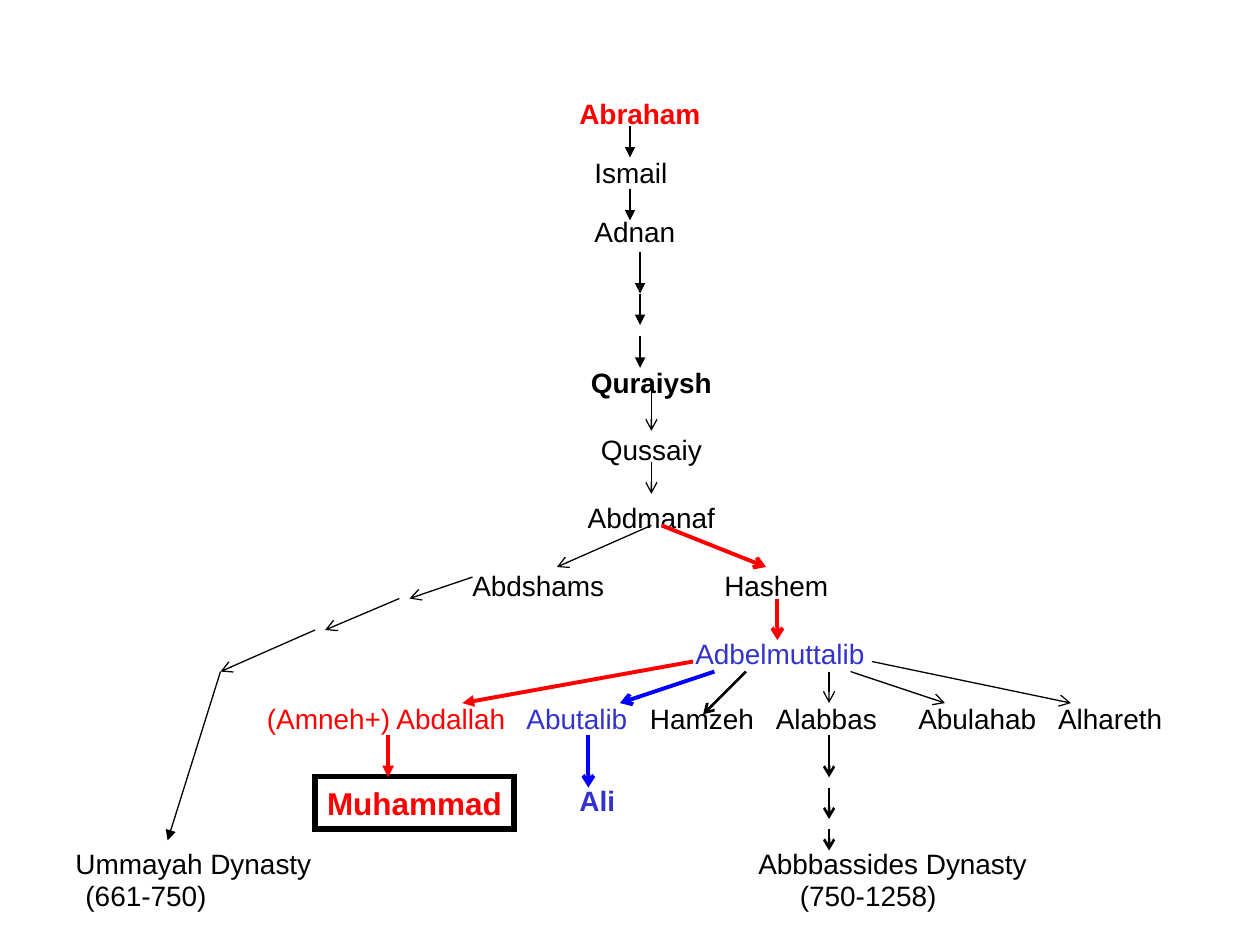
from lxml import etree
from pptx import Presentation
from pptx.dml.color import RGBColor
from pptx.enum.shapes import MSO_CONNECTOR, MSO_SHAPE
from pptx.enum.text import MSO_ANCHOR, PP_ALIGN
from pptx.oxml.ns import qn
from pptx.util import Inches, Pt

STRAIGHT = MSO_CONNECTOR.STRAIGHT
RECTANGLE = MSO_SHAPE.RECTANGLE
CENTER, LEFT = PP_ALIGN.CENTER, PP_ALIGN.LEFT
MIDDLE = MSO_ANCHOR.MIDDLE
BLACK, RED, BLUE, INDIGO = "000000", "FF0000", "0000FF", "3333CC"

prs = Presentation()
prs.slide_width, prs.slide_height = Inches(10), Inches(7.5)
slide = prs.slides.add_slide(prs.slide_layouts[6])
shapes = slide.shapes


def rgb(code):
    return RGBColor.from_string(code)


def write(paragraph, text, color=BLACK, size=16, bold=False, align=LEFT, before=0, indent=0):
    """Fill a paragraph; before is in points, indent in inches."""
    props = paragraph._p.get_or_add_pPr()
    props.set("marL", str(Inches(indent)))
    props.set("indent", "0")
    paragraph.text = text
    paragraph.alignment = align
    paragraph.space_before = Pt(before)
    paragraph.font.name, paragraph.font.size = "Arial", Pt(size)
    paragraph.font.bold = bold
    paragraph.font.color.rgb = rgb(color)


# Lines of descent: (left, top, width, height), paragraphs as (text, format)
patriarch = dict(before=14.4, indent=0.12)
lineage = dict(align=CENTER, before=19.4)
descents = [
    ((4.5, 0.72, 1.16, 1.39), [
        ("Abraham", dict(color=RED, bold=True)), ("Ismail", patriarch), ("Adnan", patriarch)]),
    ((1, 2.85, 8.34, 1.45), [
        ("Quraiysh", dict(bold=True, align=CENTER)),
        ("Qussaiy", lineage), ("Abdmanaf", lineage)]),
]
for place, generations in descents:
    frame = shapes.add_textbox(*map(Inches, place)).text_frame
    frame.word_wrap = True
    for index, (name, form) in enumerate(generations):
        write(frame.add_paragraph() if index else frame.paragraphs[0], name, **form)

# Single labels by row: top, then (left, width, text, format)
label_rows = [
    (4.46, [(3.65, 1.3, "Abdshams", {}), (5.65, 1.1, "Hashem", {})]),
    (5, [(5.42, 1.6, "Adbelmuttalib", dict(color=INDIGO))]),
    (5.52, [(2.02, 2.15, "(Amneh+) Abdallah", dict(color=RED)),
            (4.08, 1.05, "Abutalib", dict(color=INDIGO)),
            (5.06, 1.1, "Hamzeh", {}), (6.06, 1.1, "Alabbas", {}),
            (7.19, 1.2, "Abulahab", {}), (8.3, 1.1, "Alhareth", {})]),
    (6.17, [(4.5, 0.55, "Ali", dict(color=INDIGO, bold=True))]),
    (6.67, [(0.5, 2.15, "Ummayah Dynasty", {}), (5.92, 2.4, "Abbbassides Dynasty", {})]),
    (6.92, [(0.58, 1.25, "(661-750)", {}), (6.25, 1.35, "(750-1258)", {})]),
]
for top, labels in label_rows:
    for left, width, name, form in labels:
        frame = shapes.add_textbox(Inches(left), Inches(top), Inches(width), Inches(0.37)).text_frame
        frame.word_wrap = True
        write(frame.paragraphs[0], name, **form)

muhammad = shapes.add_shape(RECTANGLE, Inches(2.5), Inches(6.16), Inches(1.58), Inches(0.42))
muhammad.shadow.inherit = False
muhammad.fill.background()
muhammad.line.color.rgb = rgb(BLACK)
muhammad.line.width = Pt(3)
etree.SubElement(muhammad.line._get_or_add_ln(), qn("a:miter"), lim="800000")
muhammad.text_frame.word_wrap = False
muhammad.text_frame.vertical_anchor = MIDDLE
write(muhammad.text_frame.paragraphs[0], "Muhammad", RED, size=18, bold=True, align=CENTER)

# Descent arrows: (colour, width, head) and their (x1, y1, x2, y2)
arrow_groups = [
    ((BLACK, 0.75, "triangle"), [
        (5, 1, 5, 1.25), (5, 1.5, 5, 1.75), (5.08, 2, 5.08, 2.33),
        (5.08, 2.33, 5.08, 2.58), (5.08, 2.67, 5.08, 2.92), (1.75, 5.33, 1.33, 6.67)]),
    ((BLACK, 0.75, "arrow"), [
        (5.17, 3.08, 5.17, 3.42), (5.17, 3.67, 5.17, 3.92), (5.17, 4.17, 4.42, 4.5),
        (3.75, 4.58, 3.25, 4.75), (3.17, 4.75, 2.58, 5), (2.5, 5, 1.75, 5.33),
        (6.58, 5.33, 6.58, 5.58), (6.75, 5.33, 7.5, 5.58), (6.92, 5.25, 8.5, 5.58)]),
    ((BLACK, 1.5, "arrow"), [
        (5.92, 5.33, 5.58, 5.67), (6.58, 5.83, 6.58, 6.17),
        (6.58, 6.25, 6.58, 6.5), (6.58, 6.58, 6.58, 6.75)]),
    ((RED, 2.25, "arrow"), [(5.25, 4.17, 6.08, 4.5), (6.17, 4.75, 6.17, 5.08)]),
    ((RED, 2.25, "triangle"), [(5.5, 5.25, 3.67, 5.58), (3.08, 5.83, 3.08, 6.17)]),
    ((BLUE, 2.25, "arrow"), [(5.67, 5.33, 4.92, 5.58), (4.67, 5.83, 4.67, 6.25)]),
]
for (color, width, head), routes in arrow_groups:
    for route in routes:
        arrow = shapes.add_connector(STRAIGHT, *map(Inches, route))
        arrow.line.color.rgb = rgb(color)
        arrow.line.width = Pt(width)
        etree.SubElement(arrow.line._get_or_add_ln(), qn("a:tailEnd"), type=head)
        etree.SubElement(arrow._element.spPr, qn("a:effectLst"))

prs.save("out.pptx")
